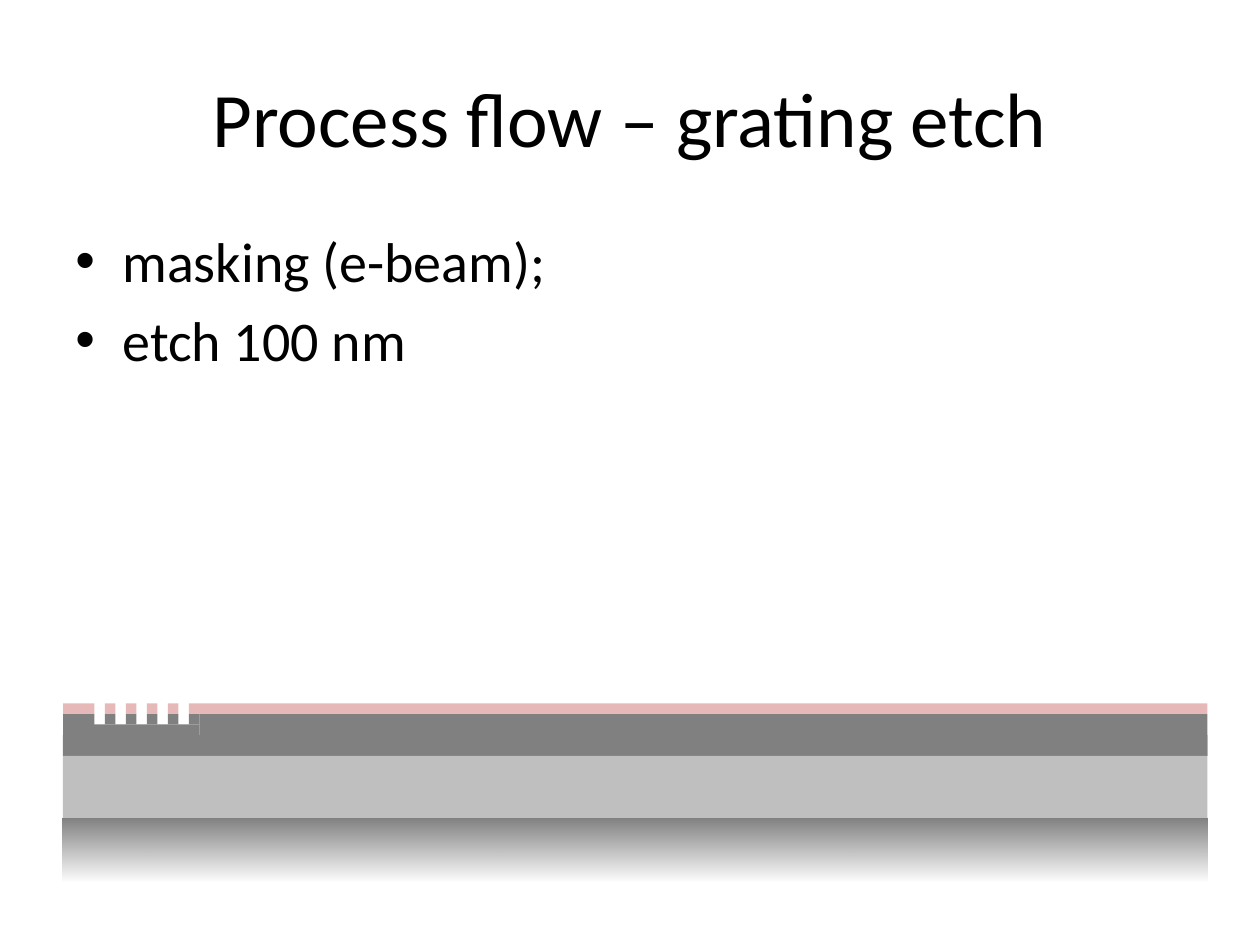
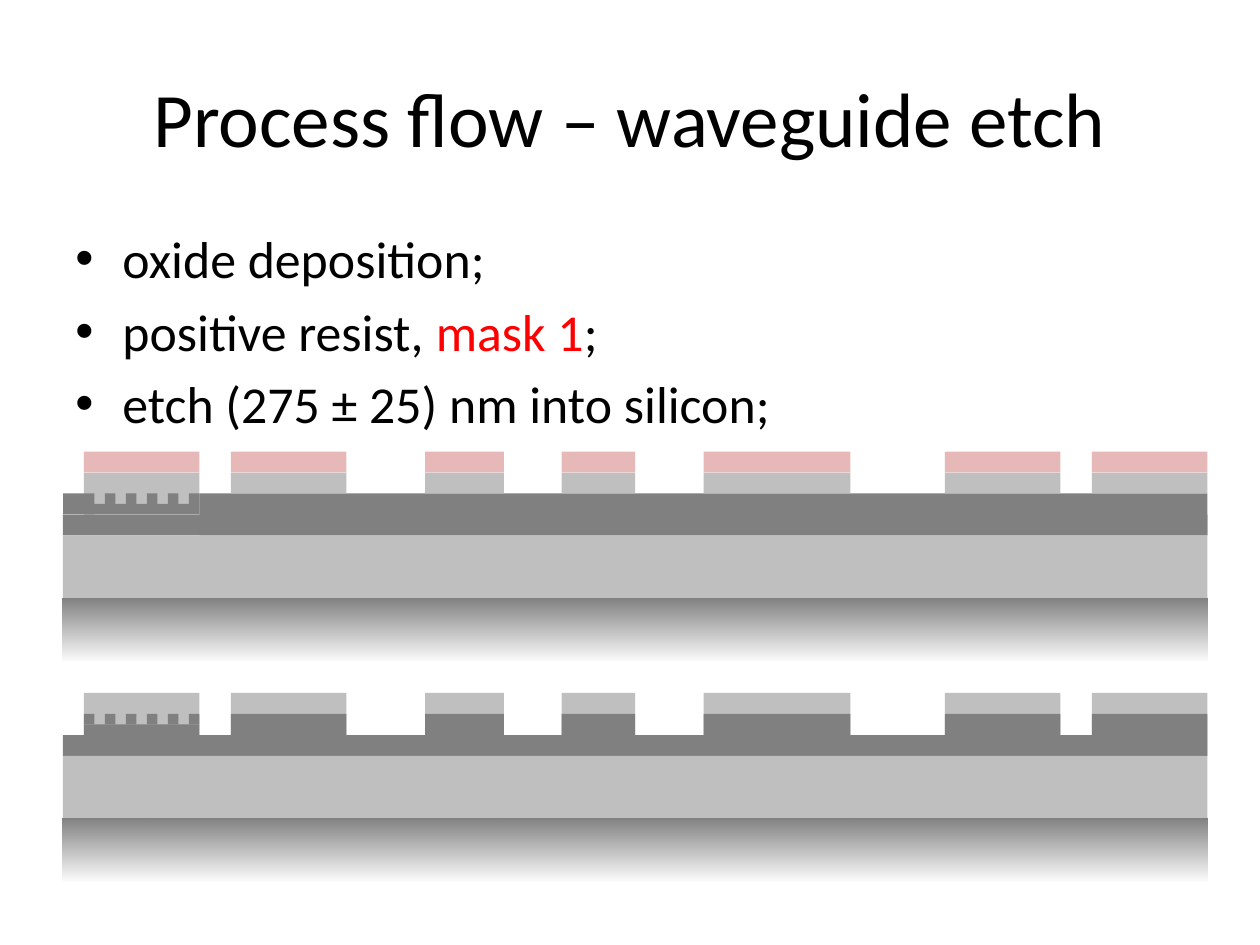
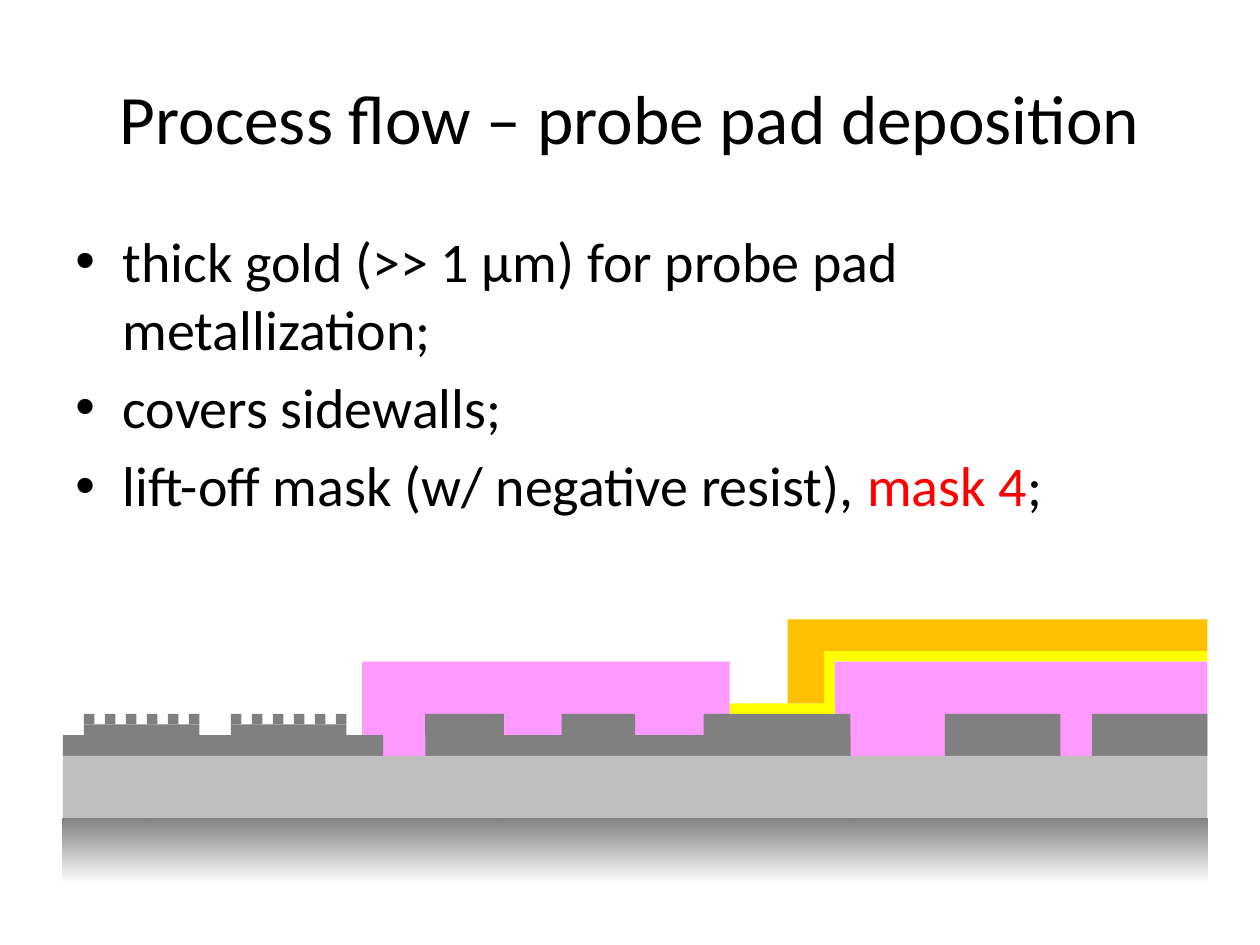
import lxml.etree
import pptx
import pptx.dml.color
import pptx.enum.shapes
import pptx.enum.text
import pptx.oxml.ns
import pptx.util

Cm, Pt = pptx.util.Cm, pptx.util.Pt
qn = pptx.oxml.ns.qn
RGB = pptx.dml.color.RGBColor.from_string
RECT = pptx.enum.shapes.MSO_SHAPE.RECTANGLE
ALIGN = pptx.enum.text.PP_ALIGN
ANCHOR = pptx.enum.text.MSO_ANCHOR
FIT = pptx.enum.text.MSO_AUTO_SIZE

INK, RED = "000000", "FF0000"
SILICON, OXIDE, RESIST = "808080", "BFBFBF", "E6B9B8"
POLYMER, METAL, GOLD = "FF99FF", "FFFF00", "FFC000"
UNIT = 2.54 / 12  # layer grid: twelfths of an inch, in cm


def bar(shapes, color, left, top, width, height):
    """Add a plain layer rectangle, measured in grid units."""
    box = [Cm(n * UNIT) for n in (left, top, width, height)]
    shape = shapes.add_shape(RECT, *box)
    shape.shadow.inherit = False
    shape.line.fill.background()
    shape.fill.solid()
    shape.fill.fore_color.rgb = RGB(color)
    return shape


def write(par, text, size=32, color=INK):
    run = par.add_run()
    run.text = text
    run.font.name = "Calibri"
    run.font.size = Pt(size)
    run.font.color.rgb = RGB(color)


# Spans are (left, width) on the grid
full = [(6, 109)]
pads = [(40.5, 7.5), (53.5, 7), (67, 14), (90, 11), (104, 11)]
combs = [(8, 11), (22, 11)]
ridges = combs + pads
teeth = [(x, 1) for x in range(8, 19, 2)]
gaps = teeth[1:]

# Layers that the unetched wafer has around its grating
wafer = [
    (SILICON, 70, 2, full),
    (SILICON, 69, 1, combs[:1]),
    (SILICON, 68, 4, [(19, 96)]),
    (SILICON, 68, 2, [(6, 3)]),
    (SILICON, 68, 1, gaps),
]
grating = wafer + [(RESIST, 67, 1, [(6, 3), (18, 97)] + gaps[:-1])]
masked = [(OXIDE, 66, 4, combs[:1])] + wafer + [
    (OXIDE, 66, 2, ridges[1:]),
    (RESIST, 64, 2, ridges),
]
etched = [
    (OXIDE, 66, 6, ridges),
    (SILICON, 70, 2, full),
    (SILICON, 69, 1, combs[:1]),
    (SILICON, 68, 2, ridges[1:]),
    (SILICON, 68, 1, teeth),
]
probe = [
    (POLYMER, 63, 9, [(79.5, 35.5), (34.5, 35)]),
    (SILICON, 70, 2, [(6, 30.5), (40.5, 40.5)] + pads[-2:]),
    (METAL, 67, 1, [(69.5, 10)]),
    (METAL, 62, 1, [(79.5, 35.5)]),
    (SILICON, 69, 1, combs),
    (SILICON, 68, 2, pads),
    (SILICON, 68, 1, teeth + [(x + 14, w) for x, w in teeth]),
    (METAL, 62, 6, [(78.5, 1)]),
    (GOLD, 59, 3, [(78.5, 36.5)]),
    (GOLD, 59, 8, [(75, 3.5)]),
]

# Title, title size, body size, body height in cm, bullets, (lift, layers);
# bars in a bullet set off its red part
pages = [
    ("Process flow – grating etch", 44, 32, 12.57,
     ["masking (e-beam);", "etch 100 nm"],
     [(0, grating)]),
    ("Process flow – waveguide etch", 44, 29.6, 3.81,
     ["oxide deposition;", "positive resist, |mask 1|;",
      "etch (275 ± 25) nm into silicon;"],
     [(0, etched), (21, masked)]),
    ("Process flow – probe pad deposition", 39.6, 32, 12.57,
     ["thick gold (>> 1 μm) for probe pad metallization;",
      "covers sidewalls;",
      "lift-off mask (w/ negative resist), |mask 4|;"],
     [(0, probe)]),
]

deck = pptx.Presentation()
deck.slide_width, deck.slide_height = Cm(25.4), Cm(19.05)

for name, big, size, tall, points, stacks in pages:
    slide = deck.slides.add_slide(deck.slide_layouts[5])
    title = slide.shapes.title
    title.left, title.top = Cm(1.27), Cm(0.76)
    title.width, title.height = Cm(22.86), Cm(3.18)
    frame = title.text_frame
    frame.auto_size = FIT.NONE
    frame.vertical_anchor = ANCHOR.MIDDLE
    frame.paragraphs[0].alignment = ALIGN.CENTER
    write(frame.paragraphs[0], name, size=big)

    body = slide.shapes.add_textbox(Cm(1.27), Cm(4.45), Cm(22.86), Cm(tall))
    frame = body.text_frame
    frame.word_wrap = True
    for i, point in enumerate(points):
        par = frame.add_paragraph() if i else frame.paragraphs[0]
        par.space_before = Pt(size * 0.2)
        props = par._p.get_or_add_pPr()
        props.set("marL", str(Cm(0.95)))
        props.set("indent", str(-Cm(0.95)))
        lxml.etree.SubElement(props, qn("a:buFont")).set("typeface", "Arial")
        lxml.etree.SubElement(props, qn("a:buChar")).set("char", "•")
        for j, part in enumerate(point.split("|")):
            write(par, part, size=size, color=RED if j % 2 else INK)

    for lift, layers in stacks:
        shapes = slide.shapes
        if lift:
            shapes = shapes.add_group_shape().shapes
        for color, top, height, spans in layers:
            for left, width in spans:
                bar(shapes, color, left, top - lift, width, height)
        bar(shapes, OXIDE, 6, 72 - lift, 109, 6)
        base = bar(shapes, SILICON, 6, 78 - lift, 109, 6)
        base.fill.gradient()
        base.fill.gradient_angle = 270
        for stop, place in zip(base.fill.gradient_stops, (0, 1)):
            stop.color.rgb = RGB(SILICON)
            stop.position = place
        fade = base._element.xpath(".//a:gs/a:srgbClr")[-1]
        lxml.etree.SubElement(fade, qn("a:alpha")).set("val", "0")

deck.save("out.pptx")
